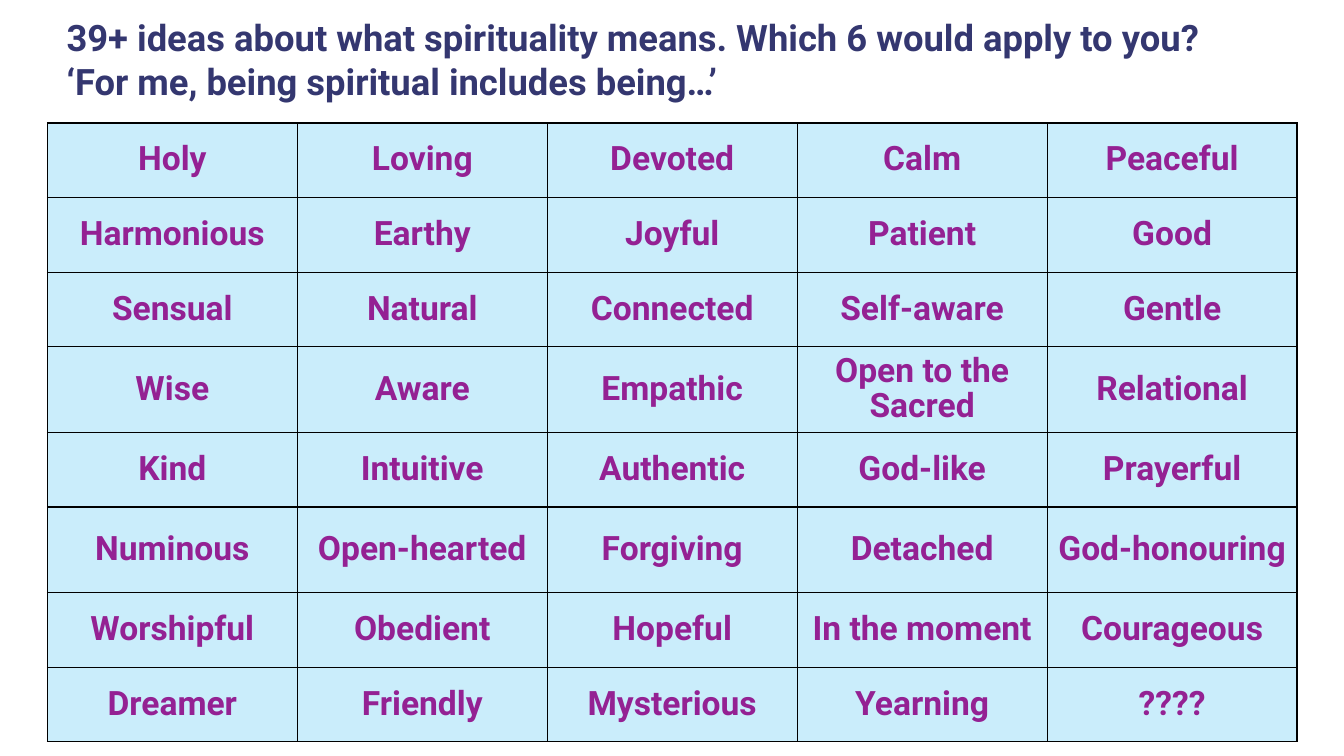
from lxml.etree import SubElement
from pptx import Presentation
from pptx.dml.color import RGBColor
from pptx.enum.text import MSO_ANCHOR as Anchor, MSO_AUTO_SIZE as AutoSize, PP_ALIGN as Align
from pptx.oxml.ns import qn
from pptx.util import Inches, Pt

TITLE = (
    "39+ ideas about what spirituality means. Which 6 would apply to you?\v"
    "‘For me, being spiritual includes being…’"
)
IDEAS = [
    ["Holy", "Loving", "Devoted", "Calm", "Peaceful"],
    ["Harmonious", "Earthy", "Joyful", "Patient", "Good"],
    ["Sensual", "Natural", "Connected", "Self-aware", "Gentle"],
    ["Wise", "Aware", "Empathic", "Open to the Sacred", "Relational"],
    ["Kind", "Intuitive", "Authentic", "God-like", "Prayerful"],
    ["Numinous", "Open-hearted", "Forgiving", "Detached", "God-honouring"],
    ["Worshipful", "Obedient", "Hopeful", "In the moment", "Courageous"],
    ["Dreamer", "Friendly", "Mysterious", "Yearning", "????"],
]
ROW_HEIGHT = 1.48
TALL_ROW_HEIGHT = 1.7
TALL_ROWS = (3, 5)
COLUMN_WIDTH = 4.96


def color(value):
    return RGBColor.from_string(value)


class SlideBuilder:
    font_name = "Roboto"
    title_color = "343770"
    idea_color = "942193"
    cell_color = "CAEDFB"
    border_color = "000000"
    border_width = 2

    def __init__(self, slide):
        self.slide = slide

    def format_text(self, text_frame, inset, align, anchor, spacing, size, font_color):
        text_frame.word_wrap = True
        paragraph = text_frame.paragraphs[0]
        paragraph.alignment = align
        paragraph.line_spacing = spacing
        for run in paragraph.runs:
            run.font.name = self.font_name
            run.font.size = Pt(size)
            run.font.bold = True
            run.font.color.rgb = color(font_color)

    def set_insets(self, container, inset, anchor):
        container.margin_left = container.margin_right = Inches(inset)
        container.margin_top = container.margin_bottom = Inches(inset)
        container.vertical_anchor = anchor

    def add_title(self, text, left, top, width, height):
        title = self.slide.shapes.title
        title.left, title.top = Inches(left), Inches(top)
        title.width, title.height = Inches(width), Inches(height)
        text_frame = title.text_frame
        text_frame.text = text
        text_frame.auto_size = AutoSize.SHAPE_TO_FIT_TEXT
        self.set_insets(text_frame, 0.1, Anchor.TOP)
        self.format_text(text_frame, 0.1, Align.LEFT, Anchor.TOP, 1.0, 52, self.title_color)

    def add_borders(self, cell):
        properties = cell._tc.get_or_add_tcPr()
        for side in ("a:lnL", "a:lnR", "a:lnT", "a:lnB"):
            line = SubElement(properties, qn(side), w=str(Pt(self.border_width)))
            fill = SubElement(line, qn("a:solidFill"))
            SubElement(fill, qn("a:srgbClr"), val=self.border_color)

    def fill_cell(self, cell, text):
        cell.text_frame.text = text
        self.set_insets(cell, 0.06, Anchor.MIDDLE)
        self.format_text(cell.text_frame, 0.06, Align.CENTER, Anchor.MIDDLE, 0.9, 48, self.idea_color)
        self.add_borders(cell)
        cell.fill.solid()
        cell.fill.fore_color.rgb = color(self.cell_color)

    def add_table(self, rows, left, top, column_width, row_heights):
        column_count = len(rows[0])
        table = self.slide.shapes.add_table(
            len(rows), column_count, Inches(left), Inches(top),
            Inches(column_width * column_count), Inches(sum(row_heights)),
        ).table
        for column in table.columns:
            column.width = Inches(column_width)
        for row, height, texts in zip(table.rows, row_heights, rows):
            row.height = Inches(height)
            for cell, text in zip(row.cells, texts):
                self.fill_cell(cell, text)


def main():
    presentation = Presentation()
    presentation.slide_width = Inches(26.67)
    presentation.slide_height = Inches(15)
    slide = presentation.slides.add_slide(presentation.slide_layouts[5])
    builder = SlideBuilder(slide)
    row_heights = [
        TALL_ROW_HEIGHT if index in TALL_ROWS else ROW_HEIGHT
        for index in range(len(IDEAS))
    ]
    builder.add_table(IDEAS, 0.94, 2.44, COLUMN_WIDTH, row_heights)
    builder.add_title(TITLE, 1.22, 0.2, 24.23, 1.92)
    presentation.save("out.pptx")


if __name__ == "__main__":
    main()
